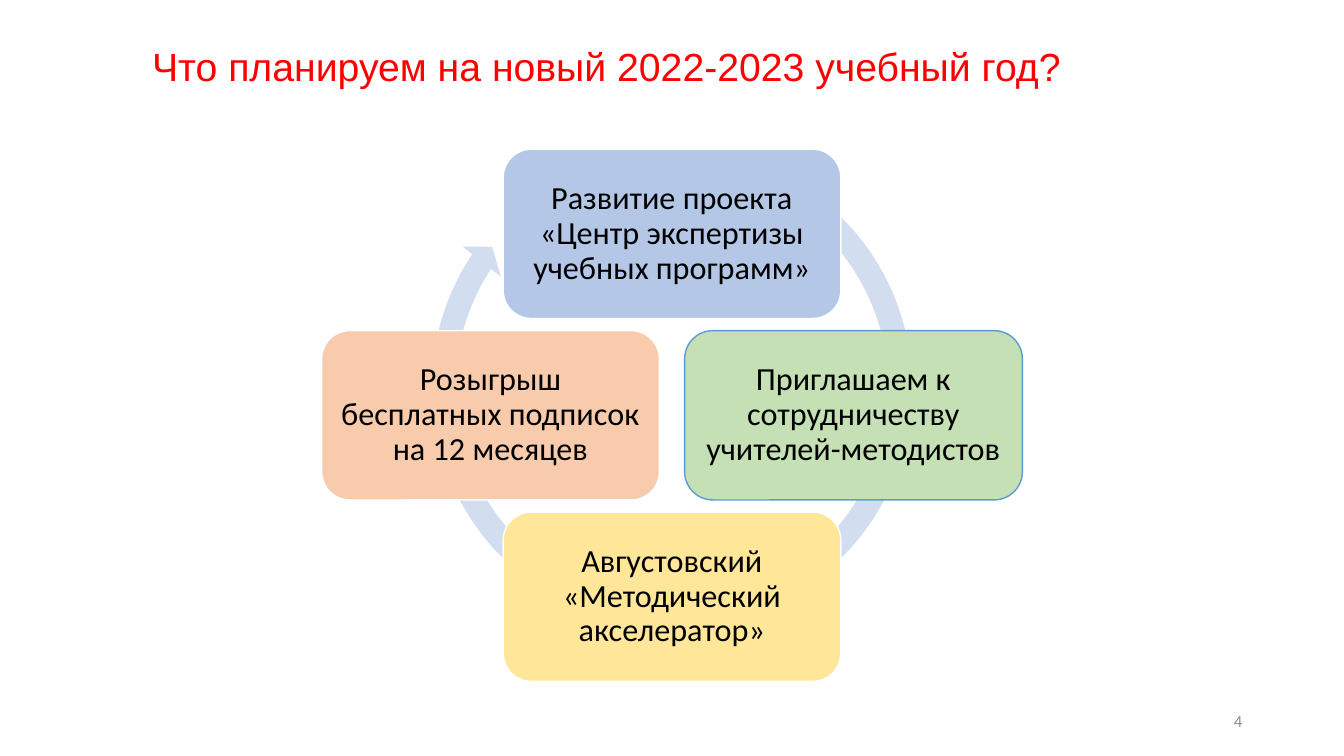
from pptx import Presentation
from pptx.dml.color import RGBColor
from pptx.enum.shapes import MSO_SHAPE
from pptx.enum.text import MSO_ANCHOR, PP_ALIGN
from pptx.util import Inches, Pt

ROUNDED = MSO_SHAPE.ROUNDED_RECTANGLE
CIRCULAR_ARROW = MSO_SHAPE.CIRCULAR_ARROW
MIDDLE = MSO_ANCHOR.MIDDLE
LEFT, CENTER, RIGHT = PP_ALIGN.LEFT, PP_ALIGN.CENTER, PP_ALIGN.RIGHT

COLORS = {
    "title": "FF0000", "text": "000000", "number": "8C8C8C",
    "arrow": "D2DEEF", "white": "FFFFFF", "outline": "5B9BD5",
    "blue": "B4C7E7", "green": "C5E0B4", "yellow": "FFE699", "orange": "F8CBAD",
}

SLIDE_WIDTH, SLIDE_HEIGHT = 13.33, 7.5
CENTER_X, CENTER_Y = SLIDE_WIDTH / 2, 4.12
STEP = 1.8  # from the centre of the cycle to the centre of each card
CARD_WIDTH, CARD_HEIGHT = 3.35, 1.68
ARROW_SIZE, ARROW_TOP = 5.01, 1.34
ARROW_ADJUSTMENTS = (0.047, 2.729, 128.119, 180.442, 0.048)

# column and row offset from the centre, fill, outline, text
CARDS = (
    (0, -1, "blue", "white", "Развитие проекта «Центр экспертизы учебных программ»"),
    (1, 0, "green", "outline", "Приглашаем к сотрудничеству учителей-методистов"),
    (0, 1, "yellow", "white", "Августовский «Методический акселератор»"),
    (-1, 0, "orange", "white", "Розыгрыш бесплатных подписок на 12 месяцев"),
)


def rgb(name):
    return RGBColor.from_string(COLORS[name])


def write(shape, text, size, font, color, align, spacing=1.0):
    frame = shape.text_frame
    frame.word_wrap = True
    frame.vertical_anchor = MIDDLE
    frame.text = text
    para = frame.paragraphs[0]
    para.alignment = align
    para.line_spacing = spacing
    span = para.runs[0]
    span.font.size = Pt(size)
    span.font.name = font
    span.font.color.rgb = rgb(color)


def add_text(slide, place, *style):
    box = slide.shapes.add_textbox(*map(Inches, place))
    write(box, *style)


def add_filled_shape(slide, kind, place, fill):
    shape = slide.shapes.add_shape(kind, *map(Inches, place))
    shape.shadow.inherit = False
    shape.fill.solid()
    shape.fill.fore_color.rgb = rgb(fill)
    shape.line.fill.background()
    return shape


def add_cycle_arrow(slide):
    place = (CENTER_X - ARROW_SIZE / 2, ARROW_TOP, ARROW_SIZE, ARROW_SIZE)
    arrow = add_filled_shape(slide, CIRCULAR_ARROW, place, "arrow")
    for index, value in enumerate(ARROW_ADJUSTMENTS):
        arrow.adjustments[index] = value


def add_card(slide, column, row, fill, outline, text):
    left = CENTER_X + column * STEP - CARD_WIDTH / 2
    top = CENTER_Y + row * STEP - CARD_HEIGHT / 2
    card = add_filled_shape(slide, ROUNDED, (left, top, CARD_WIDTH, CARD_HEIGHT), fill)
    card.line.color.rgb = rgb(outline)
    card.line.width = Pt(1)
    frame = card.text_frame
    # The rounded corners already inset the text by 0.08 inch
    frame.margin_left = frame.margin_right = Inches(0.09)
    frame.margin_top = frame.margin_bottom = Inches(0.09)
    write(card, text, 23, "Calibri", "text", CENTER, 0.9)


def main():
    deck = Presentation()
    deck.slide_width, deck.slide_height = Inches(SLIDE_WIDTH), Inches(SLIDE_HEIGHT)
    slide = deck.slides.add_slide(deck.slide_layouts[6])
    add_text(slide, (1.41, 0.17, 11.01, 1.03),
             "Что планируем на новый 2022-2023 учебный год?",
             28, "Arial", "title", LEFT, 0.9)
    add_cycle_arrow(slide)
    for card in CARDS:
        add_card(slide, *card)
    add_text(slide, (9.42, 6.95, 3, 0.4), "4", 12, "Calibri", "number", RIGHT)
    deck.save("out.pptx")


if __name__ == "__main__":
    main()
